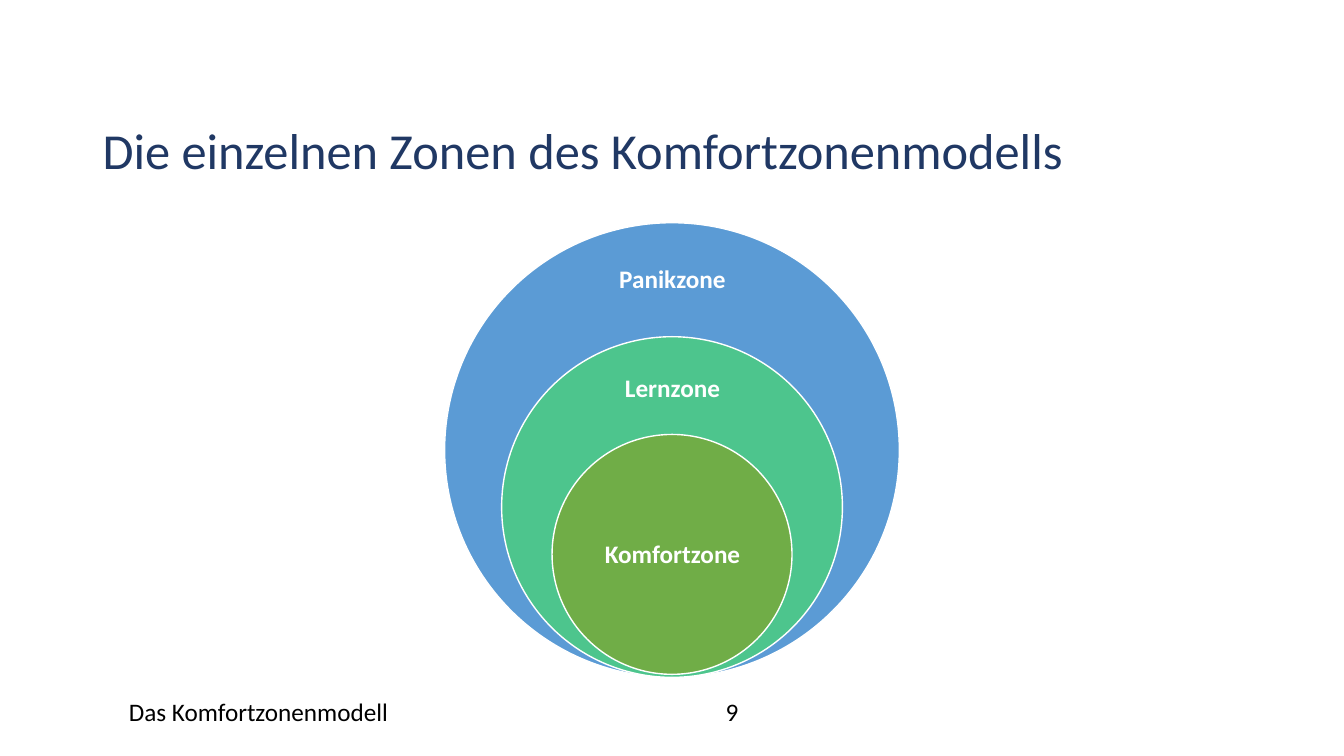
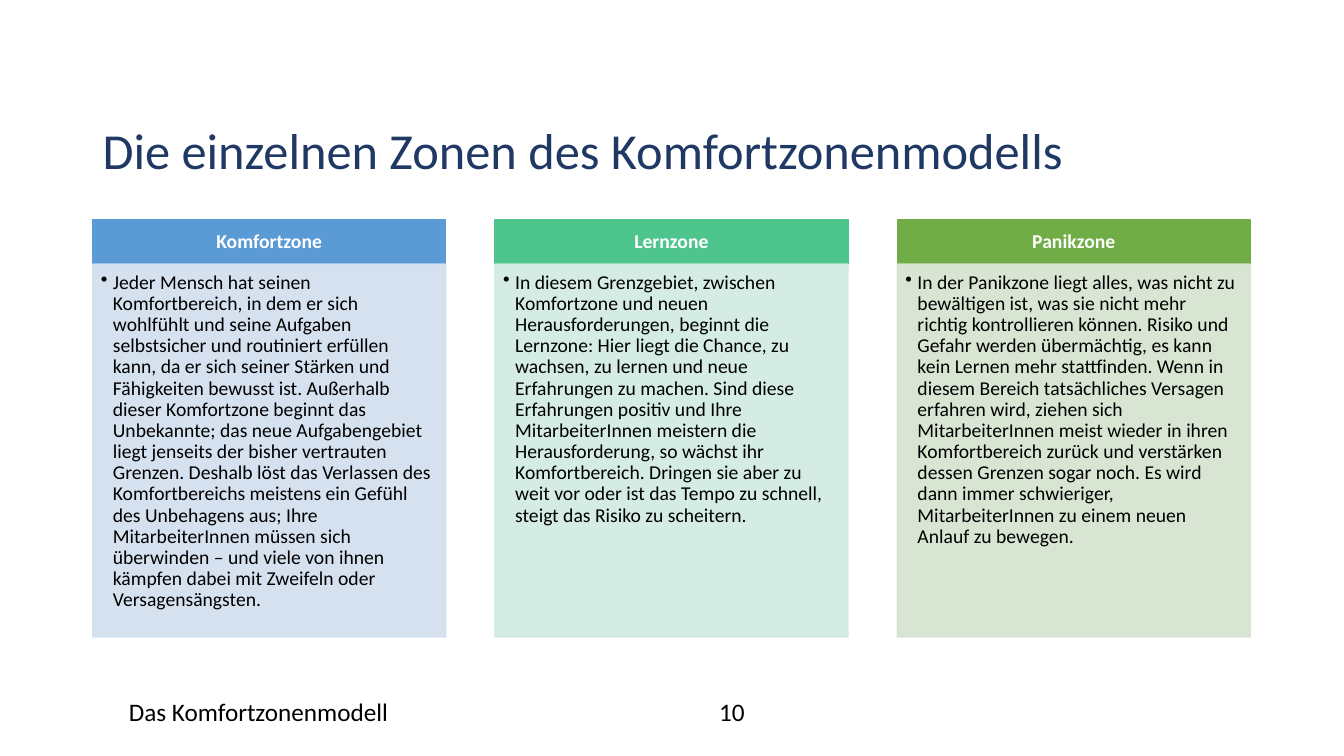
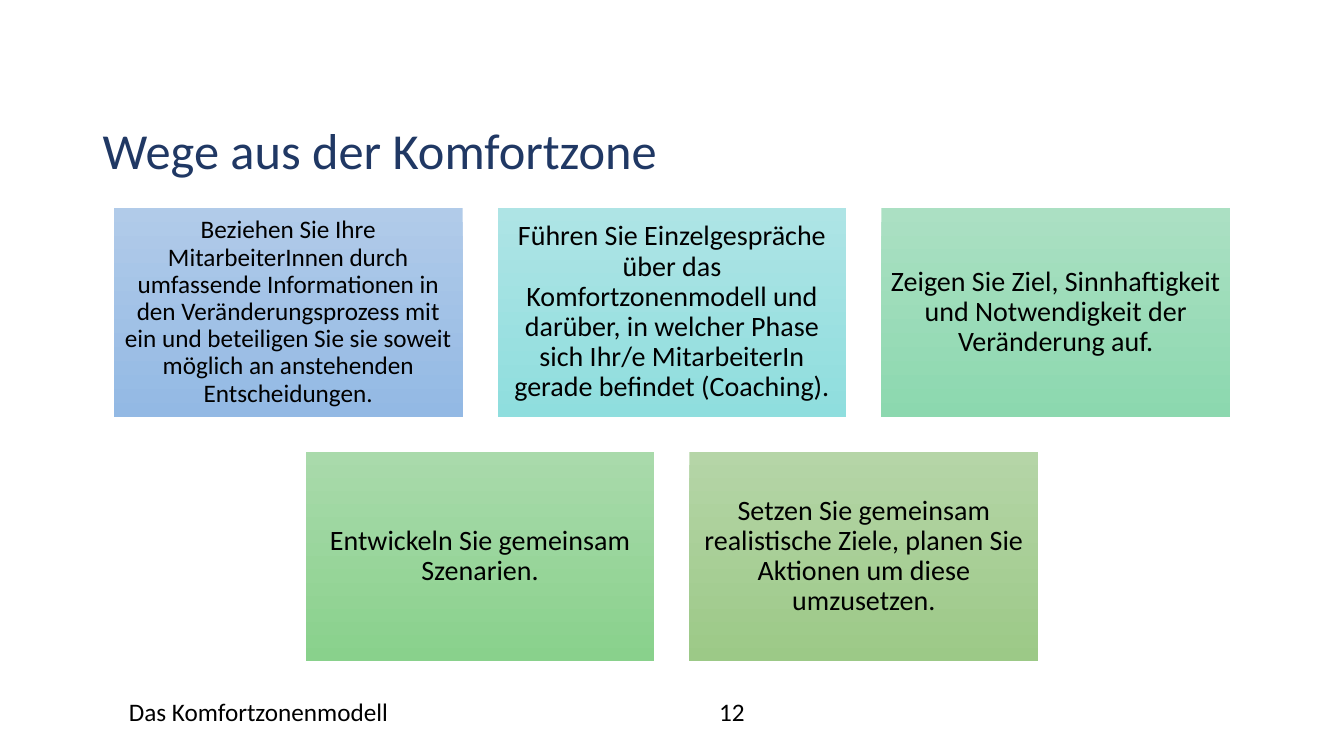
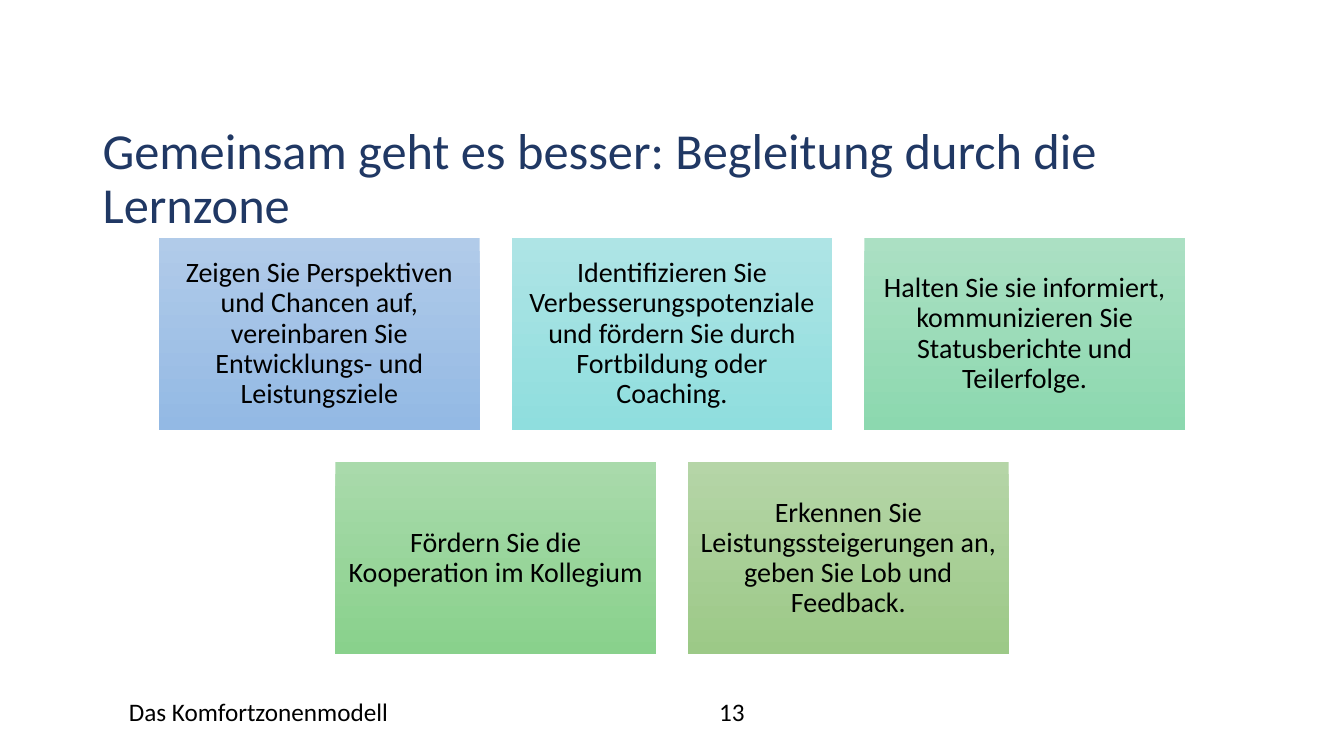
import dataclasses

import lxml.etree
import pptx
import pptx.dml.color
import pptx.enum.shapes
import pptx.enum.text
import pptx.oxml.ns
import pptx.util

Inches = pptx.util.Inches
RGBColor = pptx.dml.color.RGBColor
SHAPE = pptx.enum.shapes.MSO_SHAPE
ALIGN = pptx.enum.text.PP_ALIGN
ANCHOR = pptx.enum.text.MSO_ANCHOR
qn = pptx.oxml.ns.qn

# Shared style
FONT = "Calibri"
NAVY = RGBColor(0x20, 0x38, 0x64)
BLACK = RGBColor(0x00, 0x00, 0x00)
WHITE = RGBColor(0xFF, 0xFF, 0xFF)
BLUE = RGBColor(0x5B, 0x9B, 0xD5)
GREEN = RGBColor(0x4D, 0xC5, 0x8D)
OLIVE = RGBColor(0x70, 0xAD, 0x47)
PALE_BLUE = RGBColor(0xD2, 0xDE, 0xEF)
PALE_GREEN = RGBColor(0xD0, 0xEA, 0xE1)
PALE_OLIVE = RGBColor(0xD5, 0xE3, 0xCF)
CARD_GRADIENTS = [
    (RGBColor(0xB1, 0xCB, 0xE9), RGBColor(0x93, 0xB9, 0xE4)),
    (RGBColor(0xAE, 0xE4, 0xE5), RGBColor(0x8F, 0xDE, 0xDE)),
    (RGBColor(0xAB, 0xE0, 0xC3), RGBColor(0x8C, 0xD8, 0xAF)),
    (RGBColor(0xA9, 0xDA, 0xAB), RGBColor(0x89, 0xD1, 0x8C)),
    (RGBColor(0xB5, 0xD5, 0xA7), RGBColor(0x9C, 0xC9, 0x87)),
]
FOOTER = "Das Komfortzonenmodell"
ZONES_TITLE = "Die einzelnen Zonen des Komfortzonenmodells"
CENTER = 6.665
CARDS_PER_ROW = 3


@dataclasses.dataclass(frozen=True)
class Area:
    left: float
    top: float
    width: float
    height: float

    def lengths(self) -> list:
        return [Inches(side) for side in dataclasses.astuple(self)]


@dataclasses.dataclass(frozen=True)
class TextStyle:
    size: float
    color: RGBColor = BLACK
    bold: bool = False
    align: ALIGN = ALIGN.CENTER
    anchor: ANCHOR = ANCHOR.MIDDLE
    insets: tuple = (0.1, 0.05, 0.1, 0.05)  # left, top, right, bottom
    spacing: float = 0.9


@dataclasses.dataclass(frozen=True)
class Circle:
    name: str
    top: float
    diameter: float
    color: RGBColor
    label: Area


@dataclasses.dataclass(frozen=True)
class Column:
    heading: str
    body: str
    color: RGBColor
    pale: RGBColor


@dataclasses.dataclass(frozen=True)
class Card:
    text: str
    size: float = 20


TITLE = TextStyle(36, NAVY, align=ALIGN.LEFT, anchor=ANCHOR.TOP)
FOOTER_TEXT = TextStyle(18, align=ALIGN.LEFT, anchor=ANCHOR.TOP, spacing=1)
PAGE_NUMBER = dataclasses.replace(FOOTER_TEXT, align=ALIGN.CENTER)
CIRCLE_LABEL = TextStyle(18, WHITE, bold=True, insets=(0.14,) * 4)
COLUMN_HEADING = TextStyle(14, WHITE, bold=True, insets=(0.11, 0.06, 0.11, 0.06))
COLUMN_BODY = TextStyle(14, align=ALIGN.LEFT, anchor=ANCHOR.TOP,
                        insets=(0.08, 0.08, 0.11, 0.12))

# Content
CIRCLES = [
    Circle("Panikzone", 2.21, 4.51, BLUE, Area(5.88, 2.44, 1.58, 0.68)),
    Circle("Lernzone", 3.34, 3.38, GREEN, Area(5.88, 3.55, 1.58, 0.63)),
    Circle("Komfortzone", 4.31, 2.38, OLIVE, Area(5.83, 4.91, 1.68, 1.19)),
]
COLUMNS = [
    Column("Komfortzone",
           "Jeder Mensch hat seinen Komfortbereich, in dem er sich wohlfühlt und seine "
           "Aufgaben selbstsicher und routiniert erfüllen kann, da er sich seiner Stärken "
           "und Fähigkeiten bewusst ist. Außerhalb dieser Komfortzone beginnt das "
           "Unbekannte; das neue Aufgabengebiet liegt jenseits der bisher vertrauten "
           "Grenzen. Deshalb löst das Verlassen des Komfortbereichs meistens ein Gefühl "
           "des Unbehagens aus; Ihre MitarbeiterInnen müssen sich überwinden – und viele "
           "von ihnen kämpfen dabei mit Zweifeln oder Versagensängsten.",
           BLUE, PALE_BLUE),
    Column("Lernzone",
           "In diesem Grenzgebiet, zwischen Komfortzone und neuen Herausforderungen, "
           "beginnt die Lernzone: Hier liegt die Chance, zu wachsen, zu lernen und neue "
           "Erfahrungen zu machen. Sind diese Erfahrungen positiv und Ihre "
           "MitarbeiterInnen meistern die Herausforderung, so wächst ihr Komfortbereich. "
           "Dringen sie aber zu weit vor oder ist das Tempo zu schnell, steigt das Risiko "
           "zu scheitern.",
           GREEN, PALE_GREEN),
    Column("Panikzone",
           "In der Panikzone liegt alles, was nicht zu bewältigen ist, was sie nicht mehr "
           "richtig kontrollieren können. Risiko und Gefahr werden übermächtig, es kann "
           "kein Lernen mehr stattfinden. Wenn in diesem Bereich tatsächliches Versagen "
           "erfahren wird, ziehen sich MitarbeiterInnen meist wieder in ihren "
           "Komfortbereich zurück und verstärken dessen Grenzen sogar noch. Es wird dann "
           "immer schwieriger, MitarbeiterInnen zu einem neuen Anlauf zu bewegen.",
           OLIVE, PALE_OLIVE),
]
WAYS_OUT = [
    Card("Beziehen Sie Ihre MitarbeiterInnen durch umfassende Informationen in den "
         "Veränderungsprozess mit ein und beteiligen Sie sie soweit möglich an "
         "anstehenden Entscheidungen.", size=18),
    Card("Führen Sie Einzelgespräche über das Komfortzonenmodell und darüber, in welcher "
         "Phase sich Ihr/e MitarbeiterIn gerade befindet (Coaching)."),
    Card("Zeigen Sie Ziel, Sinnhaftigkeit und Notwendigkeit der Veränderung auf."),
    Card("Entwickeln Sie gemeinsam Szenarien."),
    Card("Setzen Sie gemeinsam realistische Ziele, planen Sie Aktionen um diese "
         "umzusetzen."),
]
SUPPORT = [
    Card("Zeigen Sie Perspektiven und Chancen auf, vereinbaren Sie Entwicklungs- und "
         "Leistungsziele"),
    Card("Identifizieren Sie Verbesserungspotenziale und fördern Sie durch Fortbildung "
         "oder Coaching."),
    Card("Halten Sie sie informiert, kommunizieren Sie Statusberichte und Teilerfolge."),
    Card("Fördern Sie die Kooperation im Kollegium"),
    Card("Erkennen Sie Leistungssteigerungen an, geben Sie Lob und Feedback."),
]


# Building blocks
def write(shape, text: str, style: TextStyle) -> None:
    frame = shape.text_frame
    frame.word_wrap = True
    frame.vertical_anchor = style.anchor
    (frame.margin_left, frame.margin_top,
     frame.margin_right, frame.margin_bottom) = map(Inches, style.insets)
    frame.text = text
    para = frame.paragraphs[0]
    para.alignment = style.align
    para.line_spacing = style.spacing
    font = para.runs[0].font
    font.name = FONT
    font.size = pptx.util.Pt(style.size)
    font.bold = style.bold
    font.color.rgb = style.color


def add_text(page, area: Area, text: str, style: TextStyle) -> None:
    write(page.shapes.add_textbox(*area.lengths()), text, style)


def add_panel(page, kind: SHAPE, area: Area, fill: RGBColor, line: RGBColor):
    shape = page.shapes.add_shape(kind, *area.lengths())
    shape.shadow.inherit = False
    shape.fill.solid()
    shape.fill.fore_color.rgb = fill
    shape.line.color.rgb = line
    shape.line.width = pptx.util.Pt(1)
    return shape


def set_opacity(shape, percent: int) -> None:
    for color in shape._element.spPr.iter(qn("a:srgbClr")):
        lxml.etree.SubElement(color, qn("a:alpha")).set("val", str(percent * 1000))


def add_bullet(para, indent: float) -> None:
    properties = para._p.get_or_add_pPr()
    properties.set("marL", str(Inches(indent)))
    properties.set("indent", str(Inches(-indent)))
    lxml.etree.SubElement(properties, qn("a:buChar")).set("char", "•")


def add_page(deck, title: str, number: int):
    page = deck.slides.add_slide(deck.slide_layouts[6])
    add_text(page, Area(0.92, 1.2, 11.5, 0.97), title, TITLE)
    add_text(page, Area(1.18, 6.86, 4.5, 0.4), FOOTER, FOOTER_TEXT)
    add_text(page, Area(5.76, 6.86, 3, 0.4), str(number), PAGE_NUMBER)
    return page


# Slide bodies
def add_circles(page, circles: list[Circle]) -> None:
    for circle in circles:
        area = Area(CENTER - circle.diameter / 2, circle.top,
                    circle.diameter, circle.diameter)
        add_panel(page, SHAPE.OVAL, area, circle.color, WHITE)
        add_text(page, circle.label, circle.name, CIRCLE_LABEL)


def add_columns(page, columns: list[Column]) -> None:
    for index, column in enumerate(columns):
        left = 0.92 + index * 3.99
        heading = add_panel(page, SHAPE.RECTANGLE, Area(left, 2.18, 3.5, 0.44),
                            column.color, column.color)
        write(heading, column.heading, COLUMN_HEADING)
        body = add_panel(page, SHAPE.RECTANGLE, Area(left, 2.62, 3.5, 3.7),
                         column.pale, column.pale)
        set_opacity(body, 90)
        write(body, column.body, COLUMN_BODY)
        add_bullet(body.text_frame.paragraphs[0], 0.12)


def add_cards(page, cards: list[Card], top: float, width: float) -> None:
    """Draw centred rows of cards; height and gap follow from the width."""
    height, gap = width * 0.6, width * 0.1
    for index, card in enumerate(cards):
        row, position = divmod(index, CARDS_PER_ROW)
        count = min(CARDS_PER_ROW, len(cards) - row * CARDS_PER_ROW)
        row_left = CENTER - (count * width + (count - 1) * gap) / 2
        area = Area(row_left + position * (width + gap), top + row * (height + gap),
                    width, height)
        shape = page.shapes.add_shape(SHAPE.RECTANGLE, *area.lengths())
        shape.shadow.inherit = False
        shape.line.fill.background()
        shape.fill.gradient()
        shape.fill.gradient_angle = 270
        for stop, color in zip(shape.fill.gradient_stops, CARD_GRADIENTS[index]):
            stop.color.rgb = color
        inset = card.size * 0.004
        write(shape, card.text, TextStyle(card.size, insets=(inset,) * 4))


def main() -> None:
    deck = pptx.Presentation()
    deck.slide_width = Inches(13.33)
    deck.slide_height = Inches(7.5)
    add_circles(add_page(deck, ZONES_TITLE, 9), CIRCLES)
    add_columns(add_page(deck, ZONES_TITLE, 10), COLUMNS)
    add_cards(add_page(deck, "Wege aus der Komfortzone", 12), WAYS_OUT, 2.06, 3.46)
    add_cards(add_page(deck, "Gemeinsam geht es besser: Begleitung durch die Lernzone", 13),
              SUPPORT, 2.36, 3.18)
    deck.save("out.pptx")


if __name__ == "__main__":
    main()
